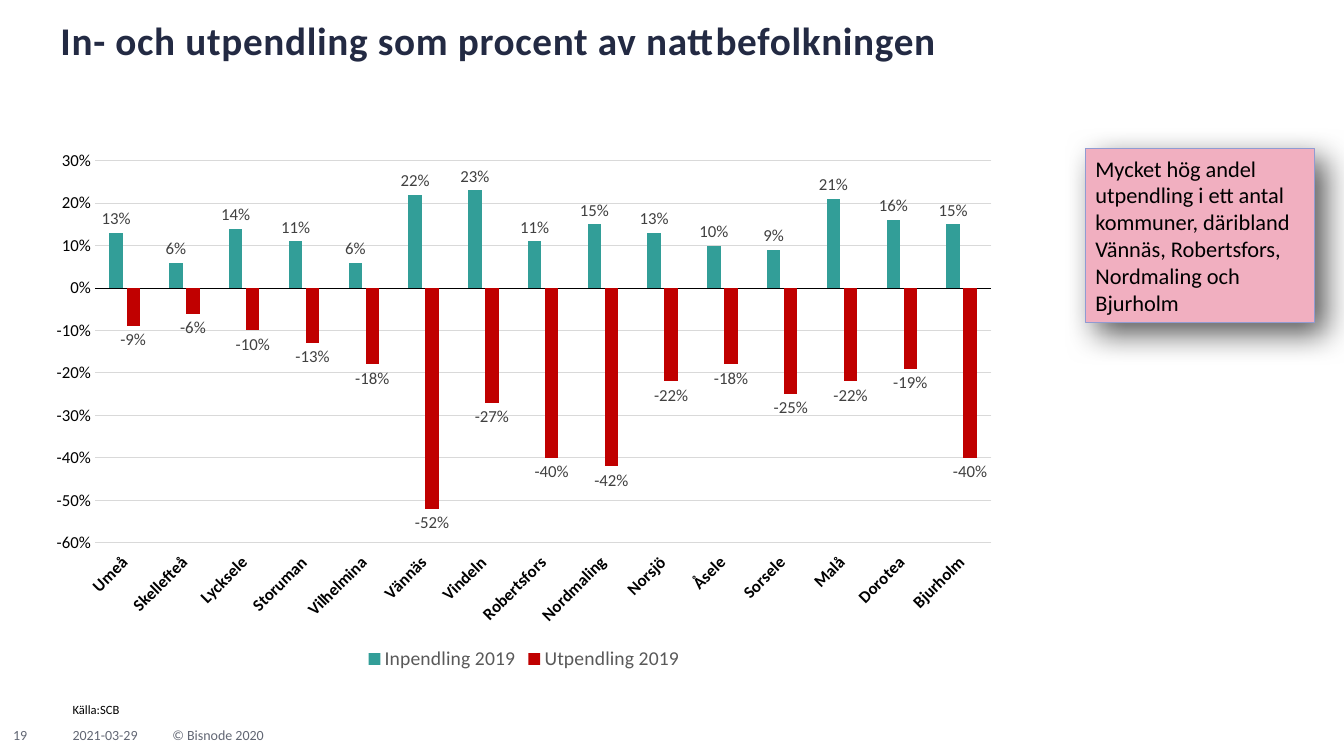
"""Builds the slide on commuting as a share of the resident population."""
from lxml import etree
from pptx import Presentation
from pptx.chart import data as cd
from pptx.dml.color import RGBColor
from pptx.enum import chart as ch, shapes, text
from pptx.oxml import ns
from pptx.util import Pt


def rgb(color):
    return RGBColor.from_string(color)


def write(sp, words, size, color, bold=False, anchor="BOTTOM", wrap=True,
          insets=(0, 0, 0, 0), line=None, after=0):
    tf = sp.text_frame
    tf.word_wrap = wrap
    tf.vertical_anchor = text.MSO_ANCHOR[anchor]
    tf.auto_size = text.MSO_AUTO_SIZE.NONE
    tf.margin_left, tf.margin_top, tf.margin_right, tf.margin_bottom = map(Pt, insets)
    p = tf.paragraphs[0]
    p.alignment = text.PP_ALIGN.LEFT
    p.line_spacing = line
    p.space_after = Pt(after)
    r = p.add_run()
    r.text = words
    r.font.name, r.font.size, r.font.bold = "Calibri", Pt(size), bold
    r.font.color.rgb = rgb(color)
    return r


prs = Presentation()
prs.slide_width, prs.slide_height = Pt(960), Pt(540)
s = prs.slides.add_slide(prs.slide_layouts[5])

title = s.shapes.title
title.left, title.top, title.width, title.height = Pt(43.2), Pt(15), Pt(873), Pt(30.5)
r = write(title, "In- och utpendling som procent av nattbefolkningen", 28, "232A43",
          bold=True, line=0.9, after=6)
r.font._element.set("spc", "50")

footers = [
    ("2021-03-29", 51.8, 519, 54, 12.2, 10, "626774", None),
    ("© Bisnode 2020", 123.1, 519, 284, 12.2, 10, "626774", None),
    ("19", 9.4, 519, 12.2, 12.2, 10, "626774", None),
    ("Källa:SCB", 51.8, 502.5, 34, 10, 9, "000000", 0.9),
]
for words, left, top, width, height, size, color, line in footers:
    sp = s.shapes.add_textbox(Pt(left), Pt(top), Pt(width), Pt(height))
    write(sp, words, size, color, wrap=False, line=line)

commuting = [
    ("Umeå", 0.13, -0.09), ("Skellefteå", 0.06, -0.06), ("Lycksele", 0.14, -0.1),
    ("Storuman", 0.11, -0.13), ("Vilhelmina", 0.06, -0.18), ("Vännäs", 0.22, -0.52),
    ("Vindeln", 0.23, -0.27), ("Robertsfors", 0.11, -0.4), ("Nordmaling", 0.15, -0.42),
    ("Norsjö", 0.13, -0.22), ("Åsele", 0.1, -0.18), ("Sorsele", 0.09, -0.25),
    ("Malå", 0.21, -0.22), ("Dorotea", 0.16, -0.19), ("Bjurholm", 0.15, -0.4),
]
towns, inbound, outbound = zip(*commuting)
data = cd.CategoryChartData(number_format="0%")
data.categories = towns
data.add_series("Inpendling 2019", inbound)
data.add_series("Utpendling 2019", outbound)
chart = s.shapes.add_chart(ch.XL_CHART_TYPE.COLUMN_CLUSTERED, Pt(26.6), Pt(100),
                           Pt(695.5), Pt(382.3), data).chart
chart.has_title = False
chart.has_legend = True
chart.legend.position = ch.XL_LEGEND_POSITION.BOTTOM
chart.legend.include_in_layout = False

plot = chart.plots[0]
plot.gap_width, plot.overlap, plot.vary_by_categories = 219, -27, False
fonts = [(chart.font, 10, "000000", False), (chart.legend.font, 14, "595959", False)]
for series, color in zip(plot.series, ("329E98", "C00000")):
    series.invert_if_negative = False
    series.format.fill.solid()
    series.format.fill.fore_color.rgb = rgb(color)
    labels = series.data_labels
    labels.show_value = True
    labels.number_format, labels.number_format_is_linked = "0%", False
    labels.position = ch.XL_LABEL_POSITION.OUTSIDE_END
    fonts.append((labels.font, 12, "404040", False))

cat, val = chart.category_axis, chart.value_axis
for axis, bold in ((cat, True), (val, False)):
    axis.major_tick_mark = axis.minor_tick_mark = ch.XL_TICK_MARK.NONE
    fonts.append((axis.tick_labels.font, 12, "000000", bold))
for font, size, color, bold in fonts:
    font.name, font.size, font.bold = "Calibri", Pt(size), bold
    font.color.rgb = rgb(color)

cat.tick_label_position = ch.XL_TICK_LABEL_POSITION.LOW
cat.format.line.color.rgb = rgb("000000")
cat.format.line.width = Pt(0.75)
cat._element.find(ns.qn("c:txPr")).find(ns.qn("a:bodyPr")).set("rot", "-2700000")
val.minimum_scale, val.maximum_scale, val.major_unit = -0.6, 0.3, 0.1
val.tick_labels.number_format = "0%"
val.tick_labels.number_format_is_linked = False
val.format.line.fill.background()
val.has_major_gridlines = True
val.major_gridlines.format.line.color.rgb = rgb("D9D9D9")
val.major_gridlines.format.line.width = Pt(0.75)

note = s.shapes.add_shape(shapes.MSO_SHAPE.RECTANGLE, Pt(775.4), Pt(105.8),
                          Pt(163.5), Pt(124.6))
note.fill.solid()
note.fill.fore_color.rgb = rgb("F1AFC0")
note.line.color.rgb = rgb("909BD2")
note.line.width = Pt(0.5)
note.shadow.inherit = False
effects = note._element.spPr.find(ns.qn("a:effectLst"))
shadow = etree.SubElement(effects, ns.qn("a:outerShdw"), blurRad=str(Pt(23)),
                          dist=str(Pt(11)), dir="2700000", algn="tl", rotWithShape="0")
tint = etree.SubElement(shadow, ns.qn("a:srgbClr"), val="000000")
etree.SubElement(tint, ns.qn("a:alpha"), val="65000")
write(note, "Mycket hög andel utpendling i ett antal kommuner, däribland Vännäs, "
      "Robertsfors, Nordmaling och Bjurholm", 16, "000000", anchor="MIDDLE",
      insets=(7.2, 3.6, 7.2, 3.6), after=6)

prs.save("out.pptx")
